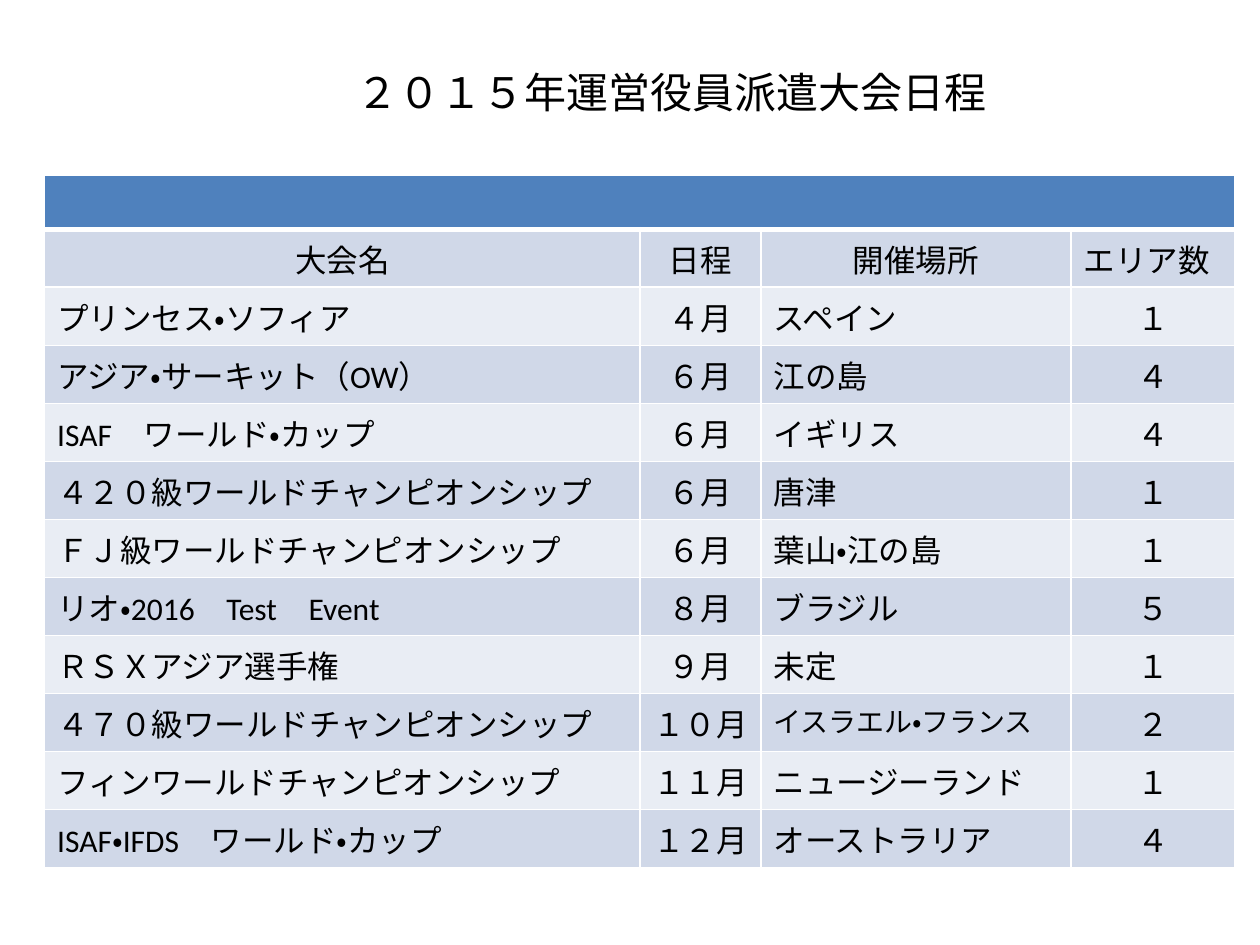
"""Build the 2015 race officer dispatch schedule slide."""
from lxml import etree
from pptx import Presentation
from pptx.dml.color import RGBColor
from pptx.enum.lang import MSO_LANGUAGE_ID
from pptx.enum.text import MSO_ANCHOR, PP_ALIGN
from pptx.oxml.ns import qn
from pptx.util import Cm, Pt

LEFT, CENTER = PP_ALIGN.LEFT, PP_ALIGN.CENTER
MIDDLE = MSO_ANCHOR.MIDDLE
JAPANESE = MSO_LANGUAGE_ID.JAPANESE

TITLE = "２０１５年運営役員派遣大会日程"
HEADINGS = ("大会名", "日程", "開催場所", "エリア数")
EVENTS = [
    ("プリンセス・ソフィア", "４月", "スペイン", "１"),
    ("アジア・サーキット（OW）", "６月", "江の島", "４"),
    ("ISAF　ワールド・カップ", "６月", "イギリス", "４"),
    ("４２０級ワールドチャンピオンシップ", "６月", "唐津", "１"),
    ("ＦＪ級ワールドチャンピオンシップ", "６月", "葉山・江の島", "１"),
    ("リオ・2016　Test　Event", "８月", "ブラジル", "５"),
    ("ＲＳＸアジア選手権", "９月", "未定", "１"),
    ("４７０級ワールドチャンピオンシップ", "１０月", "イスラエル・フランス", "２"),
    ("フィンワールドチャンピオンシップ", "１１月", "ニュージーランド", "１"),
    ("ISAF・IFDS　ワールド・カップ", "１２月", "オーストラリア", "４"),
]
HEADING_ALIGNS = (CENTER, CENTER, CENTER, LEFT)
EVENT_ALIGNS = (LEFT, CENTER, LEFT, CENTER)
SMALLER_TEXT = {"イスラエル・フランス": 16}
COLUMN_WIDTHS = (12, 2.44, 6.25, 3.3)
BANNER_HEIGHT, ROW_HEIGHT = 1.08, 1.17
BANNER, BANDS = "4F81BD", ("E9EDF4", "D0D8E8")
WHITE, BLACK = "FFFFFF", "000000"


def color(value):
    """Turn a hex string into a colour."""
    return RGBColor.from_string(value)


def write(frame, text, size, align):
    """Put one styled run into the first paragraph of a frame."""
    para = frame.paragraphs[0]
    para.alignment = align
    span = para.add_run()
    span.text = text
    span.font.name = "Calibri"
    span.font.size = Pt(size)
    span.font.language_id = JAPANESE
    span.font.color.rgb = color(BLACK)


def style_cell(cell, fill, bottom=1):
    """Fill a cell and draw white lines on its four sides."""
    properties = cell._tc.get_or_add_tcPr()
    for side, width in (("L", 1), ("R", 1), ("T", 1), ("B", bottom)):
        line = etree.SubElement(properties, qn(f"a:ln{side}"), w=str(Pt(width)))
        solid = etree.SubElement(line, qn("a:solidFill"))
        etree.SubElement(solid, qn("a:srgbClr"), val=WHITE)
    cell.fill.solid()
    cell.fill.fore_color.rgb = color(fill)


def add_title(page):
    """Add the heading, centred with a wider left inset."""
    box = page.shapes.add_textbox(Cm(1.27), Cm(0.76), Cm(22.86), Cm(2.16))
    frame = box.text_frame
    frame.word_wrap = True
    frame.vertical_anchor = MIDDLE
    frame.margin_left = Cm(1.94)
    write(frame, TITLE, 24, CENTER)


def add_schedule(page):
    """Add the banner, the headings and one row per event."""
    rows = [HEADINGS, *EVENTS]
    heights = [BANNER_HEIGHT] + [ROW_HEIGHT] * len(rows)
    table = page.shapes.add_table(
        len(heights), len(COLUMN_WIDTHS), Cm(0.9), Cm(3.54),
        Cm(sum(COLUMN_WIDTHS)), Cm(sum(heights))).table
    for column, width in zip(table.columns, COLUMN_WIDTHS):
        column.width = Cm(width)
    for row, height in zip(table.rows, heights):
        row.height = Cm(height)
    for cell in table.rows[0].cells:
        style_cell(cell, BANNER, bottom=3)
    table.cell(0, 0).merge(table.cell(0, len(COLUMN_WIDTHS) - 1))
    for number, texts in enumerate(rows, start=1):
        aligns = HEADING_ALIGNS if number == 1 else EVENT_ALIGNS
        for position, (text, align) in enumerate(zip(texts, aligns)):
            cell = table.cell(number, position)
            style_cell(cell, BANDS[number % 2])
            write(cell.text_frame, text, SMALLER_TEXT.get(text, 18), align)


def main():
    """Create and save the deck."""
    deck = Presentation()
    deck.slide_width, deck.slide_height = Cm(25.4), Cm(19.05)
    page = deck.slides.add_slide(deck.slide_layouts[6])
    add_title(page)
    add_schedule(page)
    deck.save("out.pptx")


if __name__ == "__main__":
    main()
